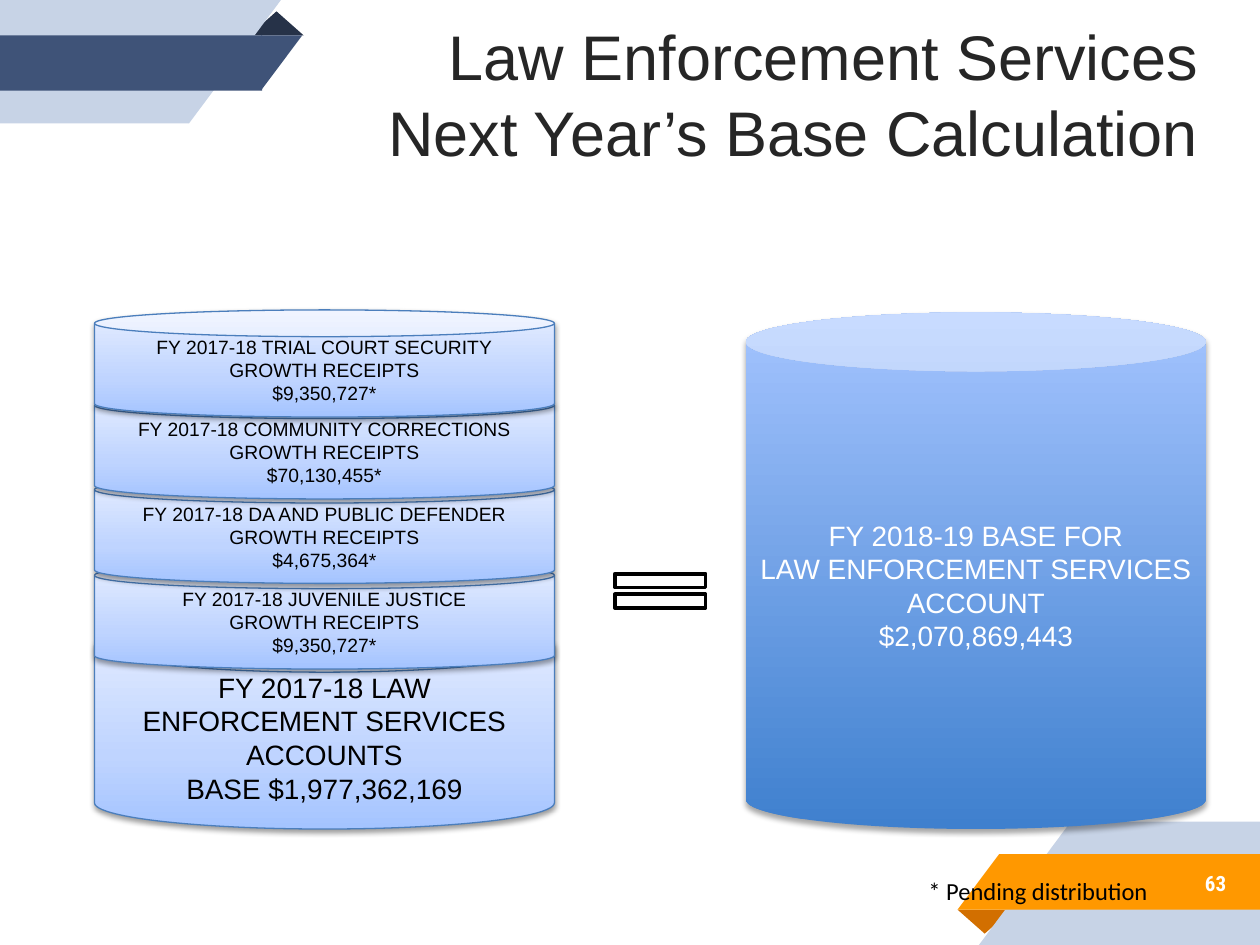
from dataclasses import dataclass

from lxml import etree
from pptx import Presentation
from pptx.dml import color
from pptx.enum import shapes, text
from pptx.oxml import ns
from pptx.util import Inches, Pt

Kind = shapes.MSO_SHAPE
Align = text.PP_ALIGN
Box = tuple[float, float, float, float]


@dataclass(frozen=True)
class Theme:
    pale: str = "C7D3E6"
    navy: str = "3F5378"
    dark: str = "263248"
    gold: str = "FF9800"
    rust: str = "D26F00"
    edge: str = "4B7EBC"
    ink: str = "262626"
    black: str = "000000"
    white: str = "FFFFFF"
    light: tuple = ((0, "A4C4FF"), (35, "BFD4FF"), (100, "E6EEFF"))
    deep: tuple = ((0, "3F80CE"), (100, "A4C4FF"))
    font: str = "Arial"
    note: str = "Calibri"
    page: str = "Roboto Condensed"
    head: int = 36
    large: int = 16
    mid: int = 14
    foot: int = 12
    small: int = 11


T = Theme()


@dataclass(frozen=True)
class Band:
    kind: Kind
    box: Box
    tint: str
    turn: int = 0
    flip: bool = True


@dataclass(frozen=True)
class Can:
    box: Box
    words: str
    size: int = T.small
    stops: tuple = T.light
    tint: str = T.black
    edge: str | None = T.edge
    lid: float = 0.25
    drop: float = 1.6
    shade: int = 38


RECT, WEDGE, FOLD = Kind.RECTANGLE, Kind.RIGHT_TRIANGLE, Kind.ISOSCELES_TRIANGLE
BANDS = [
    Band(FOLD, (7.6, 7.22, 0.43, 0.19), T.rust, 180, False),
    Band(RECT, (8.5, 6.52, 1.5, 0.98), T.pale),
    Band(WEDGE, (7.77, 6.52, 0.73, 0.98), T.pale),
    Band(RECT, (7.93, 6.78, 2.07, 0.44), T.gold),
    Band(WEDGE, (7.6, 6.78, 0.33, 0.44), T.gold),
    Band(FOLD, (1.98, 0.09, 0.43, 0.19), T.dark, 0, False),
    Band(RECT, (0, 0, 1.5, 0.98), T.pale, 180),
    Band(WEDGE, (1.5, 0, 0.73, 0.98), T.pale, 180),
    Band(RECT, (0, 0.28, 2.08, 0.44), T.navy, 180),
    Band(WEDGE, (2.07, 0.28, 0.33, 0.44), T.navy, 180),
]
BASE = Can((0.75, 4.92, 3.65, 1.66),
           "FY 2017-18 LAW ENFORCEMENT SERVICES ACCOUNTS\nBASE $1,977,362,169", T.large)
TOTAL = Can((5.92, 2.48, 3.65, 4.1),
            "FY 2018-19 BASE FOR\nLAW ENFORCEMENT SERVICES ACCOUNT\n$2,070,869,443",
            T.large, T.deep, T.white, None, 0.128, 1.8, 35)
GROWTH = [
    (4.46, "JUVENILE JUSTICE", "$9,350,727*"),
    (3.78, "DA AND PUBLIC DEFENDER", "$4,675,364*"),
    (3.11, "COMMUNITY CORRECTIONS", "$70,130,455*"),
    (2.46, "TRIAL COURT SECURITY", "$9,350,727*"),
]


def rgb(tint: str) -> color.RGBColor:
    return color.RGBColor.from_string(tint)


def node(root, tag: str, **attrs):
    return etree.SubElement(root, ns.qn(tag), {k: str(v) for k, v in attrs.items()})


def write(shape, words: str, size: int, tint: str, align=Align.CENTER,
          font: str = T.font, bold: bool = False, anchor=text.MSO_ANCHOR.MIDDLE) -> None:
    frame = shape.text_frame
    frame.text = words
    frame.word_wrap = True
    frame.vertical_anchor = anchor
    for para in frame.paragraphs:
        para.alignment = align
        for run in para.runs:
            run.font.name, run.font.size, run.font.bold = font, Pt(size), bold
            run.font.color.rgb = rgb(tint)


def add(slide, kind: Kind, box: Box):
    shape = slide.shapes.add_shape(kind, *map(Inches, box))
    shape.shadow.inherit = False
    shape.line.fill.background()
    return shape


def paint(shape, tint: str) -> None:
    shape.fill.solid()
    shape.fill.fore_color.rgb = rgb(tint)


def outline(shape, tint: str, width: float) -> None:
    shape.line.color.rgb = rgb(tint)
    shape.line.width = Pt(width)


def draw_band(slide, band: Band) -> None:
    shape = add(slide, band.kind, band.box)
    paint(shape, band.tint)
    shape.rotation = band.turn
    if band.flip:
        shape._element.spPr.xfrm.set("flipH", "1")


def draw_can(slide, can: Can) -> None:
    shape = add(slide, Kind.CAN, can.box)
    shape.adjustments[0] = can.lid
    shape.fill.gradient()
    shape.fill.gradient_angle = 90
    props = shape._element.spPr
    ramp = props.find(".//" + ns.qn("a:gsLst"))
    ramp.clear()
    for place, tint in can.stops:
        node(node(ramp, "a:gs", pos=place * 1000), "a:srgbClr", val=tint)
    if can.edge:
        outline(shape, can.edge, 0.75)
    cast = node(props.find(ns.qn("a:effectLst")), "a:outerShdw", blurRad=Pt(3.1),
                dist=Pt(can.drop), dir=5400000, rotWithShape=0)
    node(node(cast, "a:srgbClr", val=T.black), "a:alpha", val=can.shade * 1000)
    write(shape, can.words, can.size, can.tint)


def add_text(slide, box: Box):
    return slide.shapes.add_textbox(*map(Inches, box))


def main() -> None:
    """Build the base calculation slide."""
    deck = Presentation()
    deck.slide_width, deck.slide_height = Inches(10), Inches(7.5)
    slide = deck.slides.add_slide(deck.slide_layouts[5])
    for band in BANDS:
        draw_band(slide, band)

    page = add_text(slide, (8.2, 6.78, 1.63, 0.46))
    write(page, "63", T.foot, T.white, Align.RIGHT, T.page, True)
    frame = page.text_frame
    frame.margin_top = frame.margin_bottom = Inches(0.1)

    draw_can(slide, BASE)
    equal = add(slide, Kind.MATH_EQUAL, (4.75, 4.46, 0.98, 0.46))
    paint(equal, T.white)
    outline(equal, T.black, 2)
    draw_can(slide, TOTAL)

    title = slide.shapes.title
    title.left, title.top, title.width, title.height = map(Inches, (0.88, 0.28, 8.73, 0.92))
    write(title, "Law Enforcement Services\nNext Year’s Base Calculation",
          T.head, T.ink, Align.RIGHT)
    title.text_frame.auto_size = text.MSO_AUTO_SIZE.NONE

    for top, name, sum_ in GROWTH:
        words = f"FY 2017-18 {name}\nGROWTH RECEIPTS\n{sum_}"
        draw_can(slide, Can((0.75, top, 3.65, 0.85), words))

    note = add_text(slide, (7.27, 6.9, 2.08, 0.34))
    write(note, "* Pending distribution", T.mid, T.black, Align.LEFT, T.note,
          anchor=text.MSO_ANCHOR.TOP)
    note.text_frame.auto_size = text.MSO_AUTO_SIZE.SHAPE_TO_FIT_TEXT
    deck.save("out.pptx")


if __name__ == "__main__":
    main()
